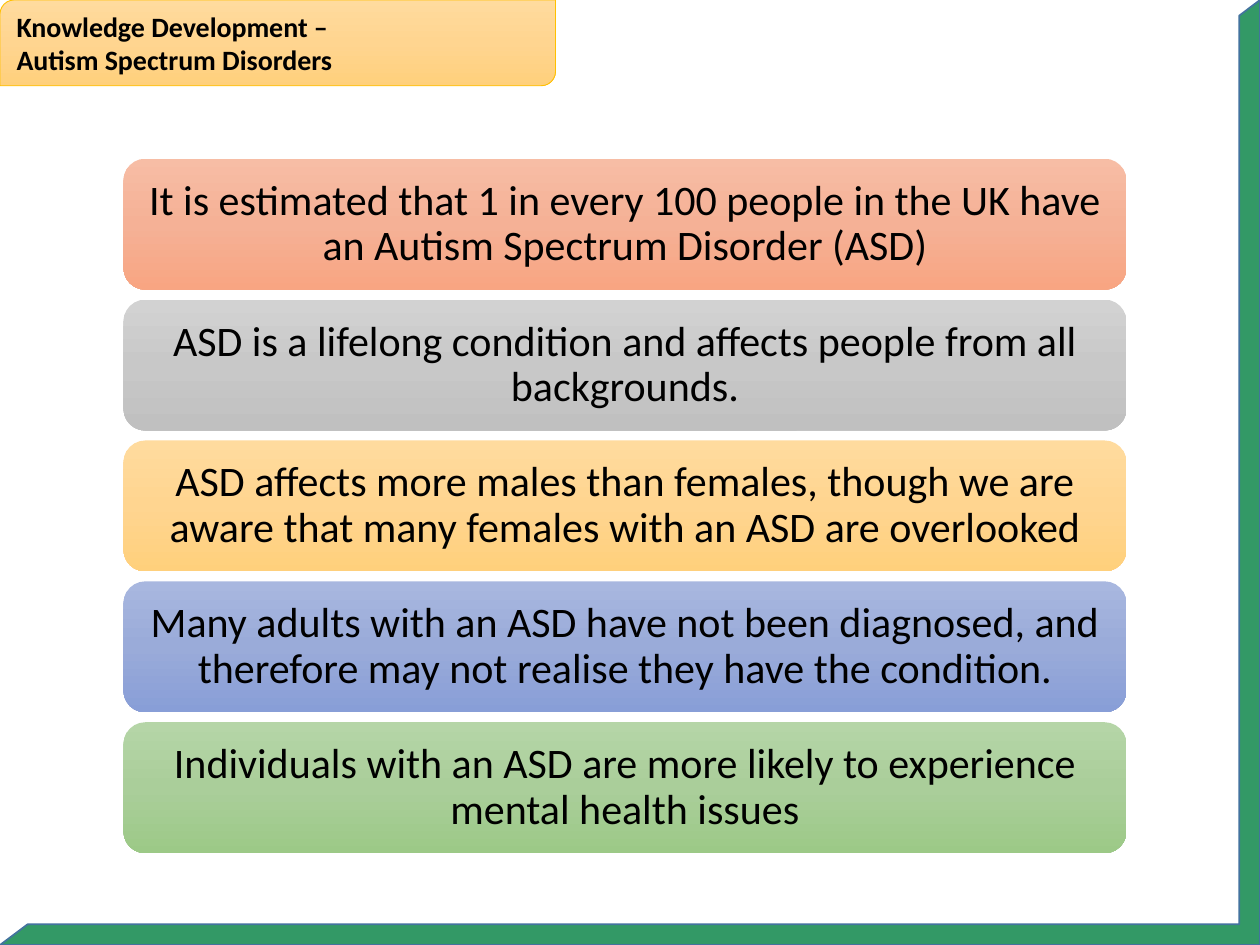
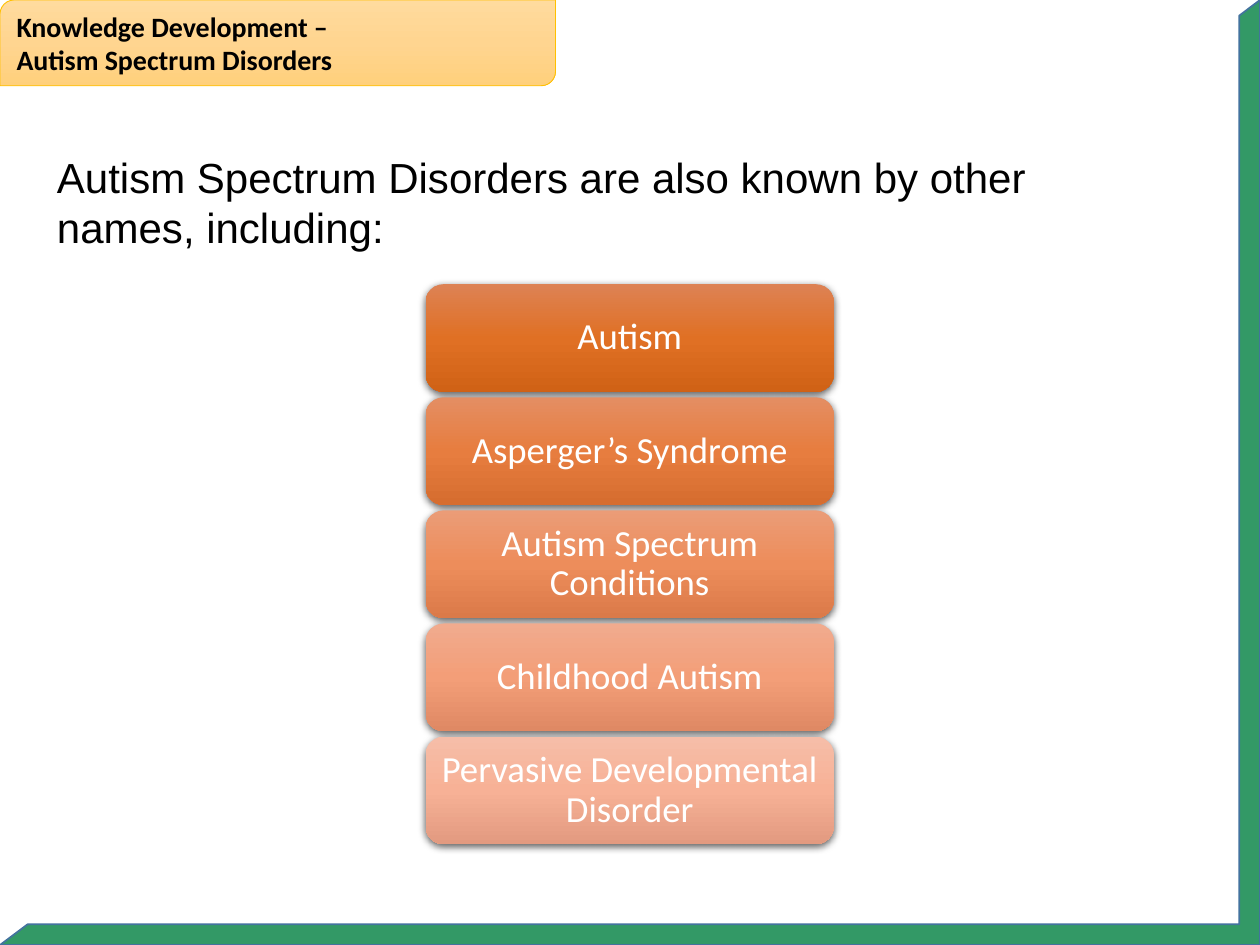
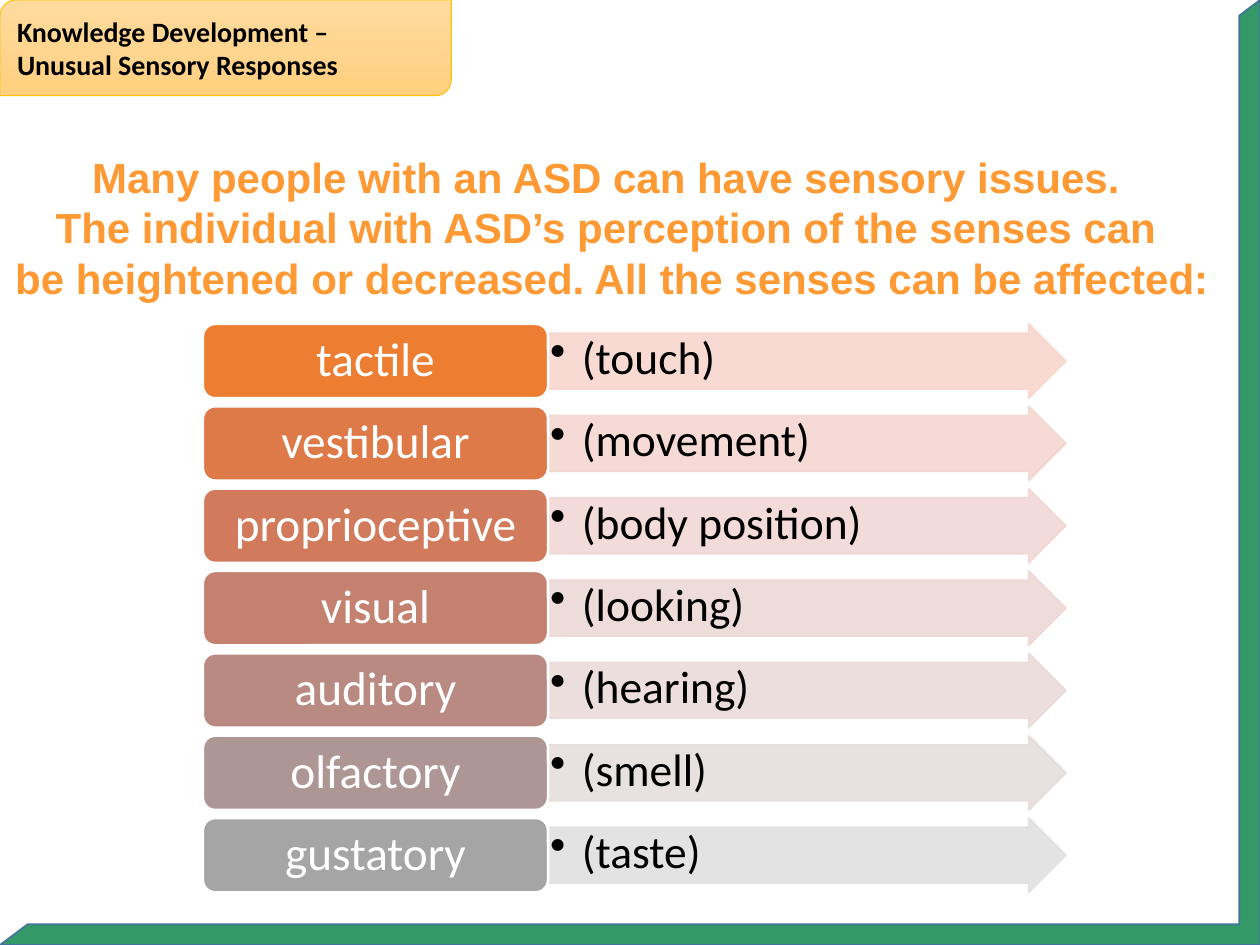
"""Build three slides on autism spectrum disorders and sensory responses."""
from copy import deepcopy

from lxml import etree
from pptx import Presentation
from pptx.dml.color import RGBColor
from pptx.enum.shapes import MSO_SHAPE
from pptx.enum.text import MSO_ANCHOR, MSO_AUTO_SIZE, PP_ALIGN
from pptx.oxml.ns import qn
from pptx.util import Cm, Pt

HALF_FRAME = MSO_SHAPE.HALF_FRAME
ROUNDED = MSO_SHAPE.ROUNDED_RECTANGLE
TAB = MSO_SHAPE.ROUND_2_DIAG_RECTANGLE
ARROW = MSO_SHAPE.RIGHT_ARROW
TOP, MIDDLE = MSO_ANCHOR.TOP, MSO_ANCHOR.MIDDLE
LEFT, CENTER = PP_ALIGN.LEFT, PP_ALIGN.CENTER
GROW = MSO_AUTO_SIZE.SHAPE_TO_FIT_TEXT

PAGE_WIDTH, PAGE_HEIGHT = 25.4, 19.05
BLACK, WHITE = "000000", "FFFFFF"
GREEN, FRAME_LINE = "339966", "43739E"
GOLD, ORANGE = "FFC000", "FF9933"
GOLD_BLEND = ("FFDB9E", "FFD590", "FFD07C")

DISORDERS_TITLE = "Knowledge Development –\nAutism Spectrum Disorders"
SENSORY_TITLE = "Knowledge Development –\nUnusual Sensory Responses"

FACTS = [
    ("It is estimated that 1 in every 100 people in the UK have an Autism Spectrum Disorder (ASD)",
     ("F7BDA5", "F5B196", "F8A582")),
    ("ASD is a lifelong condition and affects people from all backgrounds.",
     ("D2D2D2", "C8C8C8", "C0C0C0")),
    ("ASD affects more males than females, though we are aware that many females with an ASD are overlooked",
     GOLD_BLEND),
    ("Many adults with an ASD have not been diagnosed, and therefore may not realise they have the condition.",
     ("A8B7DF", "9AABD9", "889ED7")),
    ("Individuals with an ASD are more likely to experience mental health issues",
     ("B5D5A7", "AACE9A", "9CC987")),
]

NAMES_INTRO = "Autism Spectrum Disorders are also known by other\nnames, including:"
OTHER_NAMES = [
    ("Autism", ("DD8254", "E07024", "D06216")),
    ("Asperger’s Syndrome", ("E48E63", "E77D3F", "D66D2F")),
    ("Autism Spectrum Conditions", ("EB9C77", "ED8D5B", "DB7A49")),
    ("Childhood Autism", ("F1AB8E", "F39E78", "DF8964")),
    ("Pervasive Developmental Disorder", ("F6BDA8", "F7B196", "E29A80")),
]

SENSES_INTRO = (
    "Many people with an ASD can have sensory issues. \n"
    "The individual with ASD’s perception of the senses can \n"
    "be heightened or decreased. All the senses can be affected:"
)
SENSES = [
    ("tactile", "(touch)", "ED7D31", "F8D7CE"),
    ("vestibular", "(movement)", "DE7A47", "F4D7D1"),
    ("proprioceptive", "(body position)", "D17B5C", "F1D8D4"),
    ("visual", "(looking)", "C48170", "EDD9D7"),
    ("auditory", "(hearing)", "B98A82", "E9DBDA"),
    ("olfactory", "(smell)", "AE9694", "E5DEDD"),
    ("gustatory", "(taste)", "A5A5A5", "E1E1E1"),
]


def color(value):
    return RGBColor.from_string(value)


def paint_gradient(shape, blend):
    shape.fill.gradient()
    shape.fill.gradient_angle = 270
    stop_list = shape.element.spPr.find(qn("a:gradFill")).find(qn("a:gsLst"))
    stop_list.insert(1, deepcopy(stop_list[0]))
    for index, (stop, value) in enumerate(zip(shape.fill.gradient_stops, blend)):
        stop.position = index / 2
        stop.color.rgb = color(value)


def set_opacity(parent, percent):
    for paint in list(parent.iter(qn("a:srgbClr"))):
        etree.SubElement(paint, qn("a:alpha"), val=str(percent * 1000))


def add_shadow(shape):
    effects = shape.element.spPr.find(qn("a:effectLst"))
    shadow = etree.SubElement(effects, qn("a:outerShdw"), blurRad=str(Pt(4.5)),
                              dist=str(Pt(1.5)), dir="5400000", rotWithShape="0")
    etree.SubElement(shadow, qn("a:srgbClr"), val=BLACK)
    set_opacity(shadow, 63)


def add_bullet(para):
    para.level = 1
    properties = para._p.get_or_add_pPr()
    properties.set("marL", str(Cm(0.64)))
    properties.set("indent", str(-Cm(0.64)))
    etree.SubElement(properties, qn("a:buChar"), char="•")


def add_box(page, kind, place, fill, line=None, line_width=1):
    box = page.shapes.add_shape(kind, *map(Cm, place))
    box.shadow.inherit = False
    if isinstance(fill, str):
        box.fill.solid()
        box.fill.fore_color.rgb = color(fill)
    else:
        paint_gradient(box, fill)
    if line:
        box.line.color.rgb = color(line)
        box.line.width = Pt(line_width)
    else:
        box.line.fill.background()
    return box


def write(box, text, size=24, font="Calibri", ink=BLACK, bold=False, align=LEFT,
          anchor=MIDDLE, insets=(0.25, 0.13), spacing=None, bullet=False, wrap=True):
    frame = box.text_frame
    frame.word_wrap = wrap
    frame.vertical_anchor = anchor
    frame.margin_left = frame.margin_right = Cm(insets[0])
    frame.margin_top = frame.margin_bottom = Cm(insets[1])
    for index, line in enumerate(text.split("\n")):
        para = frame.add_paragraph() if index else frame.paragraphs[0]
        para.alignment = align
        if spacing:
            para.line_spacing = spacing
        if bullet:
            add_bullet(para)
        span = para.add_run()
        span.text = line
        span.font.name = font
        span.font.size = Pt(size)
        span.font.bold = bold
        span.font.color.rgb = color(ink)


def add_intro(page, text, place, **style):
    box = page.shapes.add_textbox(*map(Cm, place))
    write(box, text, font="Arial", anchor=TOP, wrap=False, **style)
    box.text_frame.auto_size = GROW


def add_page(deck):
    page = deck.slides.add_slide(deck.slide_layouts[6])
    frame = add_box(page, HALF_FRAME, (0, 0, PAGE_WIDTH, PAGE_HEIGHT), GREEN, FRAME_LINE)
    frame.adjustments[0] = frame.adjustments[1] = 0.022
    frame.rotation = 180
    return page


def add_title(page, text, width, height):
    tab = add_box(page, TAB, (0, 0, width, height), GOLD_BLEND, GOLD, 0.5)
    write(tab, text, size=16, bold=True)


def add_stack(page, items, left, top, width, height, gap, shadow=False, **style):
    for row, (text, blend) in enumerate(items):
        box = add_box(page, ROUNDED, (left, top + row * (height + gap), width, height), blend)
        if shadow:
            add_shadow(box)
        write(box, text, align=CENTER, spacing=0.9, **style)


def add_senses(page, label_left=4.09, label_width=6.96, arrow_width=10.44,
               top=6.53, height=1.5, gap=0.16):
    for row, (sense, meaning, label_fill, arrow_fill) in enumerate(SENSES):
        y = top + row * (height + gap)
        arrow = add_box(page, ARROW, (label_left + label_width, y, arrow_width, height),
                        arrow_fill, arrow_fill)
        arrow.adjustments[0] = 0.75
        set_opacity(arrow.element.spPr, 90)
        write(arrow, meaning, size=26, anchor=TOP, insets=(0.04, 0.04),
              spacing=0.9, bullet=True)
        label = add_box(page, ROUNDED, (label_left, y, label_width, height),
                        label_fill, WHITE, 1.5)
        write(label, sense, size=27, ink=WHITE, align=CENTER,
              insets=(0.28, 0.14), spacing=0.9)


def main():
    deck = Presentation()
    deck.slide_width, deck.slide_height = Cm(PAGE_WIDTH), Cm(PAGE_HEIGHT)

    page = add_page(deck)
    add_stack(page, FACTS, 2.49, 3.2, 20.22, 2.64, 0.2, insets=(0.25, 0.25))
    add_title(page, DISORDERS_TITLE, 11.2, 1.73)

    page = add_page(deck)
    add_stack(page, OTHER_NAMES, 8.58, 5.73, 8.23, 2.17, 0.11, shadow=True,
              size=21, ink=WHITE, insets=(0.22, 0.11))
    add_intro(page, NAMES_INTRO, (0.9, 2.92, 20.47, 2.31))
    add_title(page, DISORDERS_TITLE, 11.2, 1.73)

    page = add_page(deck)
    add_senses(page)
    add_intro(page, SENSES_INTRO, (-0.15, 2.92, 24.97, 3.33),
              ink=ORANGE, bold=True, align=CENTER)
    add_title(page, SENSORY_TITLE, 9.1, 1.93)

    deck.save("out.pptx")


if __name__ == "__main__":
    main()
